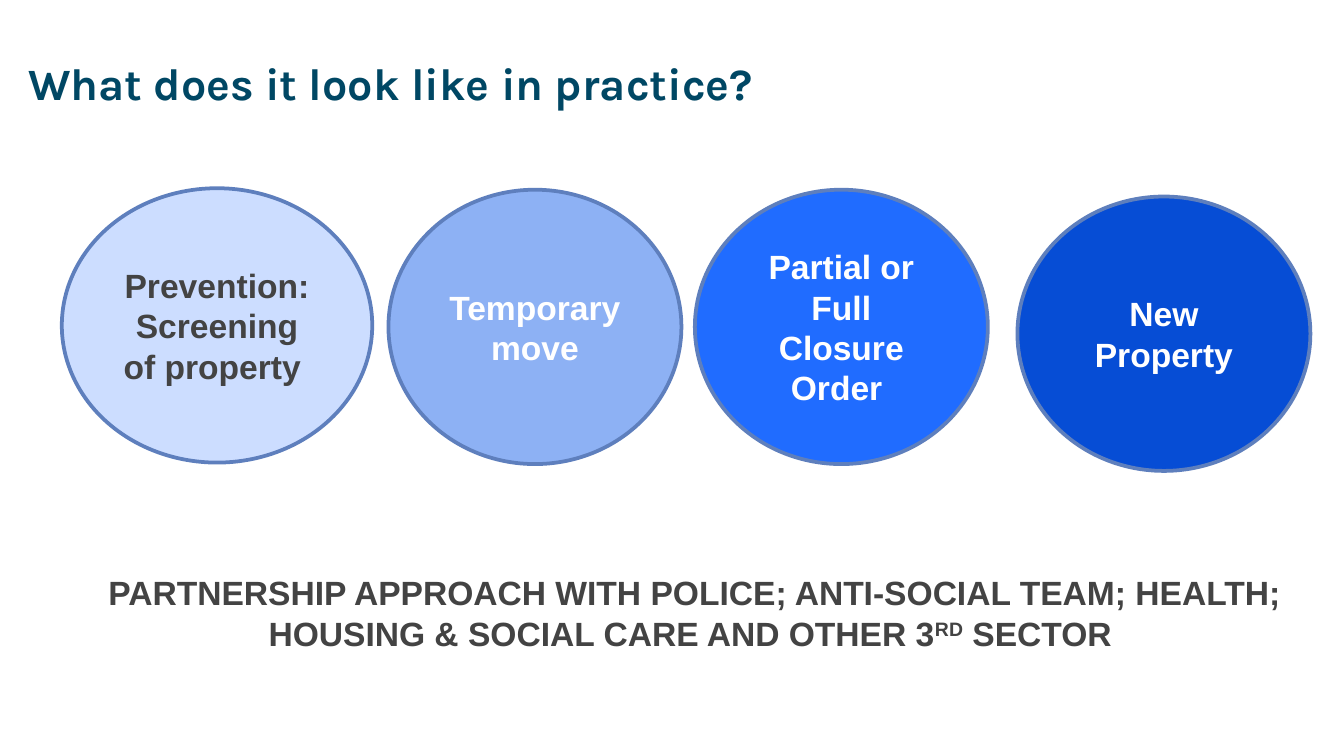
from dataclasses import dataclass
from pptx import Presentation
from pptx.dml.color import RGBColor
from pptx.enum.shapes import MSO_SHAPE
from pptx.enum.text import MSO_ANCHOR, MSO_AUTO_SIZE, PP_ALIGN
from pptx.util import Inches, Pt

WIDE = 10
HIGH = WIDE * 9 / 16


@dataclass(frozen=True)
class Theme:
    head: str = "004764"
    dark: str = "434343"
    light: str = "FFFFFF"
    edge: str = "5E7FBD"
    steps: tuple = ("CCDDFF", "8DB1F4", "206CFF", "064DD5")
    title: int = 24
    body: int = 18
    rule: int = 2


THEME = Theme()


def area(left, top, width, height):
    across, down = Inches(WIDE) / 100, Inches(HIGH) / 100
    return [round(part) for part in (left * across, top * down, width * across, height * down)]


def write(frame, *lines, font="Arial", size=THEME.body, color=THEME.dark,
          align=PP_ALIGN.CENTER, anchor=MSO_ANCHOR.TOP):
    frame.word_wrap = True
    frame.auto_size = MSO_AUTO_SIZE.NONE
    frame.vertical_anchor = anchor
    for index, line in enumerate(lines):
        para = frame.add_paragraph() if index else frame.paragraphs[0]
        para.alignment = align
        for turn, text in enumerate(line.split("^")):
            run = para.add_run()
            run.text = text
            run.font.name = font
            run.font.size = Pt(size)
            run.font.bold = True
            run.font.color.rgb = RGBColor.from_string(color)
            if turn % 2:
                run.font._element.set("baseline", "30000")


def add_title(slide, text):
    title = slide.shapes.title
    title.left, title.top, title.width, title.height = area(1.1, 5.55, 90.5, 12.6)
    frame = title.text_frame
    frame.margin_left = frame.margin_right = Inches(0.1)
    frame.margin_top = frame.margin_bottom = Inches(0.1)
    write(frame, text, font="Karla", size=THEME.title, color=THEME.head,
          align=PP_ALIGN.LEFT)


def add_step(slide, place, fill, color, lines):
    step = slide.shapes.add_shape(MSO_SHAPE.OVAL, *area(*place))
    step.shadow.inherit = False
    step.fill.solid()
    step.fill.fore_color.rgb = RGBColor.from_string(fill)
    step.line.color.rgb = RGBColor.from_string(THEME.edge)
    step.line.width = Pt(THEME.rule)
    write(step.text_frame, *lines, color=color, anchor=MSO_ANCHOR.MIDDLE)


def add_note(slide, text):
    box = slide.shapes.add_textbox(*area(4.6, 74.85, 94.2, 12.6))
    write(box.text_frame, text)


def main():
    deck = Presentation()
    deck.slide_width, deck.slide_height = Inches(WIDE), Inches(HIGH)
    slide = deck.slides.add_slide(deck.slide_layouts[5])
    add_title(slide, "What does it look like in practice?")
    steps = (
        (4.6, 24.9, 23.1, THEME.dark, ("Prevention: ", "Screening of property ")),
        (28.9, 25.1, 21.8, THEME.light, ("Temporary move",)),
        (51.7, 25.1, 21.8, THEME.light, ("Partial or Full Closure Order ",)),
        (75.7, 26, 21.8, THEME.light, ("New Property",)),
    )
    for fill, (left, top, width, color, lines) in zip(THEME.steps, steps):
        add_step(slide, (left, top, width, 36.3), fill, color, lines)
    add_note(slide, "PARTNERSHIP APPROACH WITH POLICE; ANTI-SOCIAL TEAM; HEALTH; "
                    "HOUSING & SOCIAL CARE AND OTHER 3^RD^ SECTOR ")
    deck.save("out.pptx")


if __name__ == "__main__":
    main()
